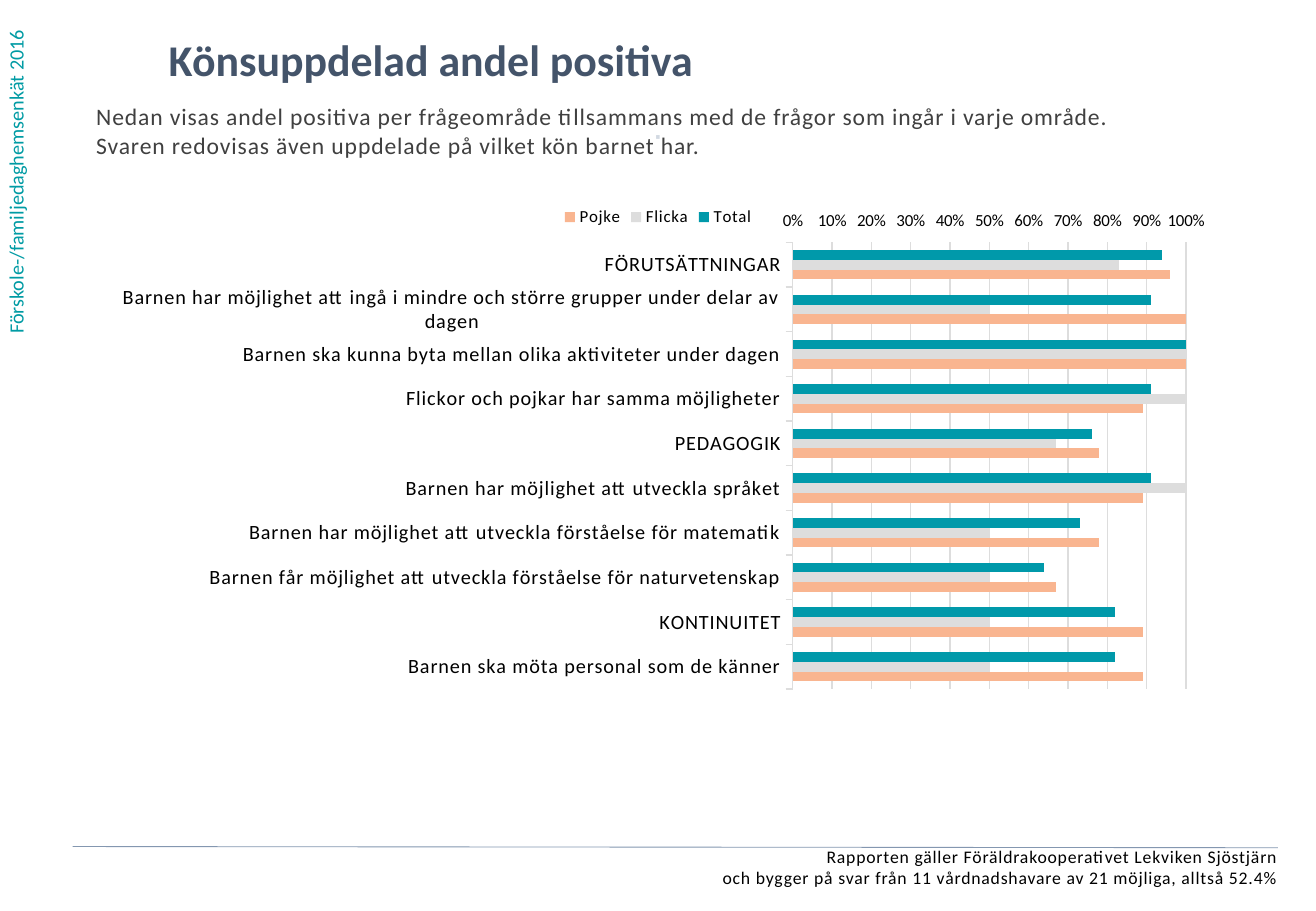
import pptx
import pptx.chart.data
import pptx.dml.color
import pptx.enum.chart
import pptx.enum.shapes
import pptx.enum.text
import pptx.oxml
import pptx.oxml.ns
import pptx.util

Pt = pptx.util.Pt
RGBColor = pptx.dml.color.RGBColor
Align = pptx.enum.text.PP_ALIGN

TEAL = RGBColor(0x00, 0x9B, 0xA4)
SLATE = RGBColor(0x44, 0x54, 0x6A)
CHARCOAL = RGBColor(0x40, 0x40, 0x40)
BLACK = RGBColor(0x00, 0x00, 0x00)
MIST = RGBColor(0xD2, 0xD9, 0xE2)
RULE_BLUE = RGBColor(0x84, 0x97, 0xB0)
GRID_GREY = RGBColor(0xDD, 0xDD, 0xDD)
TOTAL_TEAL = RGBColor(0x00, 0x99, 0xAA)
BOY_PEACH = RGBColor(0xF9, 0xB5, 0x90)

QUESTIONS = [
    "FÖRUTSÄTTNINGAR",
    "Barnen har möjlighet att ingå i mindre och större grupper under delar av dagen",
    "Barnen ska kunna byta mellan olika aktiviteter under dagen",
    "Flickor och pojkar har samma möjligheter",
    "PEDAGOGIK",
    "Barnen har möjlighet att utveckla språket",
    "Barnen har möjlighet att utveckla förståelse för matematik",
    "Barnen får möjlighet att utveckla förståelse för naturvetenskap",
    "KONTINUITET",
    "Barnen ska möta personal som de känner",
]
SHARES = [
    ("Total", TOTAL_TEAL, [0.94, 0.91, 1, 0.91, 0.76, 0.91, 0.73, 0.64, 0.82, 0.82]),
    ("Flicka", GRID_GREY, [0.83, 0.5, 1, 1, 0.67, 1, 0.5, 0.5, 0.5, 0.5]),
    ("Pojke", BOY_PEACH, [0.96, 1, 1, 0.89, 0.78, 0.89, 0.78, 0.67, 0.89, 0.89]),
]


def apply_format(target, **formats):
    """Set each named format value on the target."""
    for attribute, value in formats.items():
        setattr(target, attribute, value)


def place(shape, box):
    """Move a shape to a box of left, top, width and height in points."""
    for attribute, length in zip(("left", "top", "width", "height"), box):
        setattr(shape, attribute, Pt(length))


def write_lines(frame, lines, size, color, bold=False, align=Align.LEFT, spacing=0, inset=0):
    """Fill a text frame with one formatted paragraph per line."""
    margins = dict.fromkeys(("margin_left", "margin_top", "margin_right", "margin_bottom"), Pt(inset))
    apply_format(frame, word_wrap=True, auto_size=pptx.enum.text.MSO_AUTO_SIZE.NONE,
                 vertical_anchor=pptx.enum.text.MSO_ANCHOR.TOP, **margins)
    frame.text = "\n".join(lines)
    for paragraph in frame.paragraphs:
        apply_format(paragraph, alignment=align, space_before=Pt(0))
        for run in paragraph.runs:
            apply_format(run.font, name="Calibri", size=Pt(size), bold=bold)
            run.font.color.rgb = color
            run.font._element.set("spc", str(spacing)) if hasattr(run.font, "_element") \
                else run._r.get_or_add_rPr().set("spc", str(spacing))


def add_side_label(slide, box):
    """Add the survey name running upwards along the left edge."""
    survey = slide.shapes.add_textbox(*map(Pt, box))
    write_lines(survey.text_frame, ["Förskole-/familjedaghemsenkät 2016"], 12, TEAL, inset=4)
    survey.text_frame.margin_left = Pt(7.2)
    survey.text_frame._txBody.bodyPr.set("vert", "vert270")


def add_heading(slide, box):
    """Fill the title and the introduction below it."""
    left, top, width, height = box
    title, intro = slide.shapes.title, slide.placeholders[1]
    place(title, (left + 43, top, 600, 41))
    write_lines(title.text_frame, ["Könsuppdelad andel positiva"], 26, SLATE, bold=True)
    place(intro, (left, top + 41, width, height - 41))
    write_lines(intro.text_frame, [
        "Nedan visas andel positiva per frågeområde tillsammans med de frågor som ingår i varje område.",
        "Svaren redovisas även uppdelade på vilket kön barnet har.",
    ], 14, CHARCOAL, spacing=50)
    for paragraph in intro.text_frame.paragraphs:
        properties = paragraph._p.get_or_add_pPr()
        properties.set("marL", "0")
        properties.set("indent", "0")
        properties.insert_element_before(
            pptx.oxml.parse_xml("<a:buNone %s/>" % pptx.oxml.ns.nsdecls("a")),
            "a:tabLst", "a:defRPr", "a:extLst")
    dot = slide.shapes.add_textbox(Pt(left + 222), Pt(top + 54), Pt(222), Pt(28))
    write_lines(dot.text_frame, ["⋅"], 12, MIST, bold=True, align=Align.CENTER, spacing=50)


def fix_plot_area(chart, x, y, width, height):
    """Pin the inner plot area to fractions of the chart."""
    parts = [("layoutTarget", "inner"), ("xMode", "edge"), ("yMode", "edge"),
             ("x", x), ("y", y), ("w", width), ("h", height)]
    layout = pptx.oxml.parse_xml("<c:layout %s><c:manualLayout>%s</c:manualLayout></c:layout>" % (
        pptx.oxml.ns.nsdecls("c"), "".join('<c:%s val="%s"/>' % part for part in parts)))
    plot_area = chart._chartSpace.chart.plotArea
    for automatic in plot_area.findall(pptx.oxml.ns.qn("c:layout")):
        plot_area.remove(automatic)
    plot_area.insert(0, layout)


def add_share_chart(slide, box):
    """Add the bar chart of positive shares by question and gender."""
    enums = pptx.enum.chart
    shares = pptx.chart.data.CategoryChartData(number_format="0%")
    shares.categories = QUESTIONS
    for name, _, values in SHARES:
        shares.add_series(name, values)
    chart = slide.shapes.add_chart(enums.XL_CHART_TYPE.BAR_CLUSTERED, *map(Pt, box), shares).chart
    apply_format(chart, has_title=False, has_legend=True)
    apply_format(chart.legend, position=enums.XL_LEGEND_POSITION.TOP, include_in_layout=False)
    bars = chart.plots[0]
    apply_format(bars, gap_width=162, overlap=0, vary_by_categories=False)
    for series, (_, color, _) in zip(bars.series, SHARES):
        series.format.fill.solid()
        series.format.fill.fore_color.rgb = color

    questions, percent = chart.category_axis, chart.value_axis
    apply_format(questions, reverse_order=True, crosses=enums.XL_AXIS_CROSSES.MAXIMUM,
                 major_tick_mark=enums.XL_TICK_MARK.OUTSIDE, has_major_gridlines=False)
    apply_format(percent, minimum_scale=0, maximum_scale=1, major_unit=0.1,
                 major_tick_mark=enums.XL_TICK_MARK.OUTSIDE, has_major_gridlines=True)
    apply_format(percent.tick_labels, number_format="0%;0%", number_format_is_linked=False)
    percent.format.line.fill.background()
    for line in (questions.format.line, percent.major_gridlines.format.line):
        line.color.rgb = GRID_GREY
        line.width = Pt(0.75)
    for font, size in ((chart.font, 10), (chart.legend.font, 10),
                       (questions.tick_labels.font, 12), (percent.tick_labels.font, 10)):
        apply_format(font, name="Calibri", size=Pt(size), bold=False)
        font.color.rgb = BLACK
    for part in (questions._element, chart.legend._element):
        for properties in part.iter(pptx.oxml.ns.qn("a:defRPr")):
            properties.set("spc", "50")
    fix_plot_area(chart, 0.62, 0.09, 0.35, 0.83)


def add_footer(slide, box):
    """Add the rule and the report basis aligned right below it."""
    left, top, width, height = box
    rule = slide.shapes.add_connector(pptx.enum.shapes.MSO_CONNECTOR.STRAIGHT,
                                      Pt(left), Pt(top), Pt(left + width), Pt(top + 0.7))
    rule.line.color.rgb = RULE_BLUE
    rule.line.width = Pt(0.5)
    rule._element.spPr.append(pptx.oxml.parse_xml("<a:effectLst %s/>" % pptx.oxml.ns.nsdecls("a")))
    basis = slide.shapes.add_textbox(*map(Pt, (left, top - 0.5, width, height)))
    write_lines(basis.text_frame, [
        "Rapporten gäller Föräldrakooperativet Lekviken Sjöstjärn",
        "och bygger på svar från 11 vårdnadshavare av 21 möjliga, alltså 52.4%",
    ], 10.5, BLACK, align=Align.RIGHT, spacing=50)


def main():
    """Build the slide and save it."""
    deck = pptx.Presentation()
    apply_format(deck, slide_width=Pt(780), slide_height=Pt(540))
    slide = deck.slides.add_slide(deck.slide_layouts[1])
    add_side_label(slide, (-1.5, 0, 29, 202))
    add_heading(slide, (57, 19.5, 681, 114))
    add_share_chart(slide, (57, 115, 666, 319))
    add_footer(slide, (43, 501.8, 714.5, 31))
    deck.save("out.pptx")


if __name__ == "__main__":
    main()
